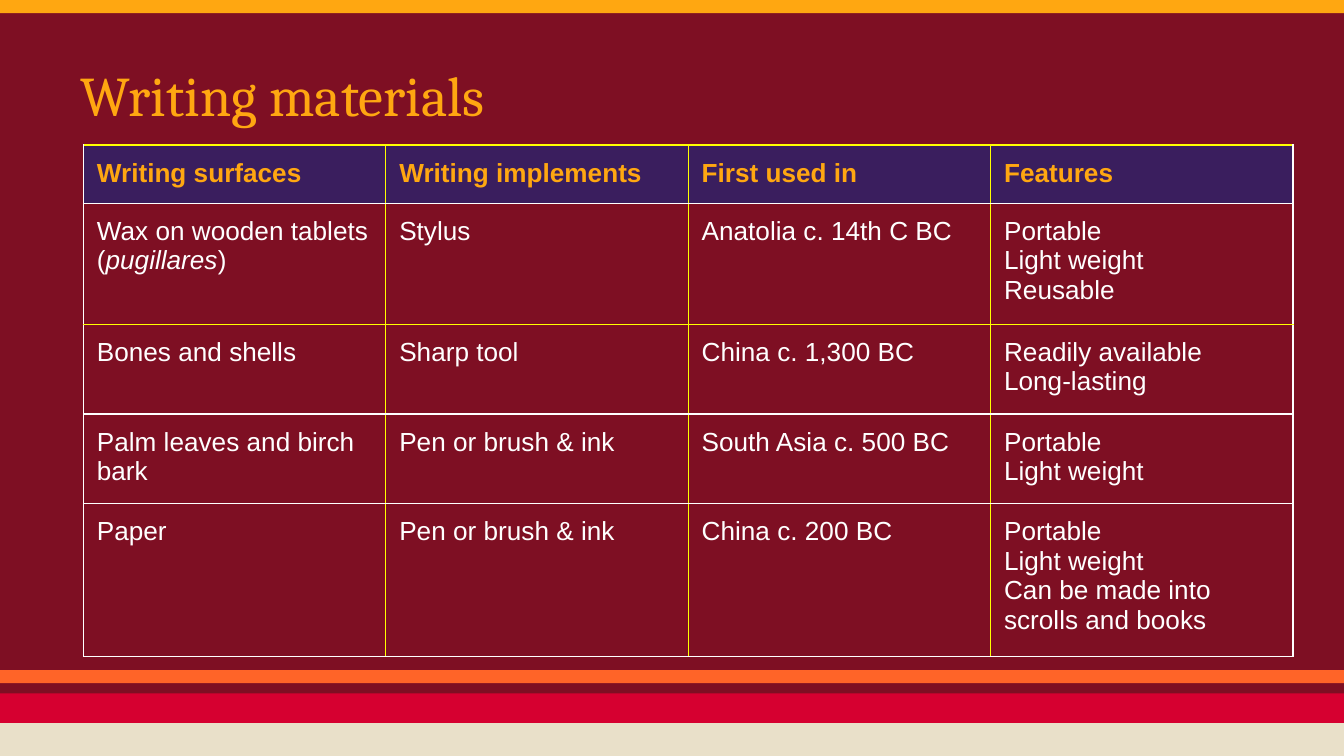
from lxml import etree
from pptx import Presentation
from pptx.dml.color import RGBColor
from pptx.enum.shapes import MSO_SHAPE
from pptx.enum.text import MSO_ANCHOR
from pptx.oxml.ns import qn
from pptx.util import Pt

RECTANGLE = MSO_SHAPE.RECTANGLE
MIDDLE = MSO_ANCHOR.MIDDLE

WIDTH, HEIGHT = 720, 405
MAROON, AMBER, PURPLE = "7E0F23", "FFA711", "3A1E5E"
WHITE, YELLOW = "FFFFFF", "FFFF00"
INSETS = dict.fromkeys(
    ("margin_left", "margin_top", "margin_right", "margin_bottom"), Pt(7.2))

# top, height, colour of each full-width band
BANDS = [
    (0, 7, AMBER),
    (371.5, 18, "D60030"),
    (387.4, 17.6, "E9E0C9"),
    (359, 7, "FF6428"),
]

# Each cell is a list of paragraphs; asterisks enclose italics
MATERIALS = [
    [["Writing surfaces"], ["Writing implements"], ["First used in"], ["Features"]],
    [["Wax on wooden tablets", "(*pugillares*)"], ["Stylus"],
     ["Anatolia c. 14th C BC"], ["Portable\nLight weight", "Reusable"]],
    [["Bones and shells"], ["Sharp tool"], ["China c. 1,300 BC"],
     ["Readily available", "Long-lasting"]],
    [["Palm leaves and birch bark"], ["Pen or brush & ink"],
     ["South Asia c. 500 BC"], ["Portable\nLight weight"]],
    [["Paper"], ["Pen or brush & ink"], ["China c. 200 BC"],
     ["Portable\nLight weight", "Can be made into scrolls and books"]],
]
ROW_HEIGHTS = [30, 61.5, 46, 46, 77]
YELLOW_RULES = {0, 2}  # horizontal rules, counted from the top edge


def rgb(value):
    return RGBColor.from_string(value)


def set_format(target, values):
    for name, value in values.items():
        setattr(target, name, value)


def write(frame, paragraphs, color, **font_format):
    """Fill a text frame, alternating upright and italic at each asterisk."""
    for number, text in enumerate(paragraphs):
        paragraph = frame.paragraphs[0] if number == 0 else frame.add_paragraph()
        for line_number, line in enumerate(text.split("\n")):
            if line_number:
                paragraph.add_line_break()
            for part_number, part in enumerate(line.split("*")):
                run = paragraph.add_run()
                run.text = part
                set_format(run.font, {**font_format, "italic": part_number % 2 == 1})
                run.font.color.rgb = rgb(color)


def set_borders(cell, colors):
    """Draw the left, right, top and bottom borders, in that order."""
    properties = cell._tc.get_or_add_tcPr()
    for position, (side, color) in enumerate(zip("LRTB", colors)):
        line = etree.Element(qn(f"a:ln{side}"), w=str(Pt(0.75)))
        fill = etree.SubElement(line, qn("a:solidFill"))
        etree.SubElement(fill, qn("a:srgbClr"), val=color)
        properties.insert(position, line)


def add_bands(slide, left, width):
    for top, height, color in BANDS:
        band = slide.shapes.add_shape(RECTANGLE, Pt(left), Pt(top), Pt(width), Pt(height))
        band.shadow.inherit = False
        band.fill.solid()
        band.fill.fore_color.rgb = rgb(color)
        band.line.fill.background()


def add_title(slide, left, top, width, height):
    title = slide.shapes.add_textbox(Pt(left), Pt(top), Pt(width), Pt(height))
    set_format(title.text_frame, {**INSETS, "word_wrap": True, "vertical_anchor": MIDDLE})
    write(title.text_frame, ["Writing materials"], AMBER, name="Cambria", size=Pt(30))


def add_materials(slide, left, top, width):
    row_count, column_count = len(MATERIALS), len(MATERIALS[0])
    table = slide.shapes.add_table(row_count, column_count, Pt(left), Pt(top),
                                   Pt(width), Pt(sum(ROW_HEIGHTS))).table
    set_format(table, {"first_row": False, "horz_banding": False})
    for column in table.columns:
        column.width = Pt(width / column_count)

    # Inner vertical rules are yellow, the outer ones white
    vertical = [WHITE] + [YELLOW] * (column_count - 1) + [WHITE]
    horizontal = [YELLOW if i in YELLOW_RULES else WHITE for i in range(row_count + 1)]

    for r, row in enumerate(MATERIALS):
        table.rows[r].height = Pt(ROW_HEIGHTS[r])
        header = r == 0
        for c, paragraphs in enumerate(row):
            cell = table.cell(r, c)
            set_format(cell, INSETS)
            if header:
                cell.fill.solid()
                cell.fill.fore_color.rgb = rgb(PURPLE)
            else:
                cell.fill.background()
            set_borders(cell, vertical[c:c + 2] + horizontal[r:r + 2])
            write(cell.text_frame, paragraphs, AMBER if header else WHITE,
                  name="Arial", size=Pt(14), bold=header)


def main():
    deck = Presentation()
    deck.slide_width, deck.slide_height = Pt(WIDTH), Pt(HEIGHT)
    slide = deck.slides.add_slide(deck.slide_layouts[6])
    slide.background.fill.solid()
    slide.background.fill.fore_color.rgb = rgb(MAROON)

    add_bands(slide, 0, WIDTH)
    add_title(slide, 36, 16.5, 648, 68)
    add_materials(slide, 44.7, 77.7, 648)
    deck.save("out.pptx")


if __name__ == "__main__":
    main()
